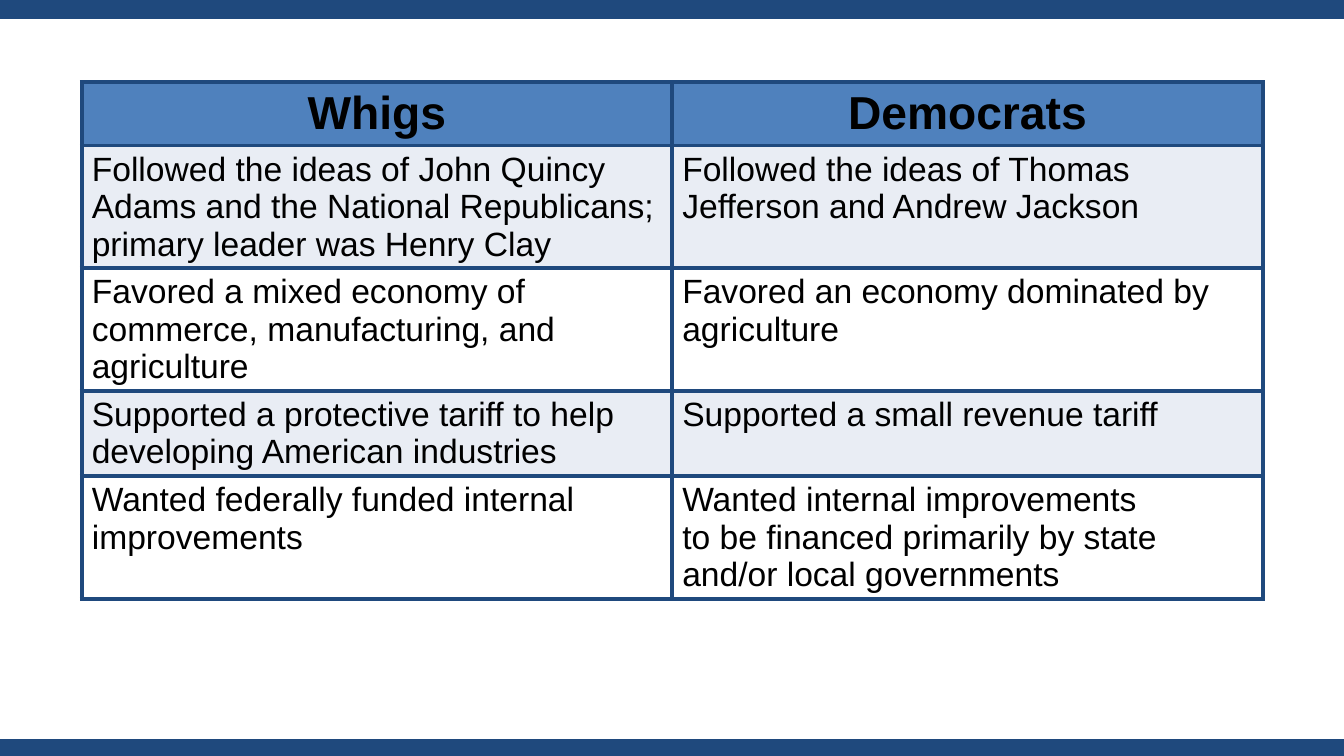
from dataclasses import dataclass

from lxml.etree import SubElement
from pptx import Presentation
from pptx.dml.color import RGBColor
from pptx.enum.shapes import MSO_SHAPE
from pptx.enum.text import MSO_ANCHOR, PP_ALIGN
from pptx.oxml.ns import qn
from pptx.util import Cm, Pt

COLORS = {
    "navy": "1F497D",
    "blue": "4F81BD",
    "pale": "E9EDF4",
    "white": "FFFFFF",
    "black": "000000",
}
FONT = "Arial"
BORDER = Pt(3)
WIDTH, HEIGHT = Cm(33.87), Cm(19.05)


@dataclass
class Row:
    height: float
    fill: str
    whigs: str
    dems: str
    head: bool = False


ROWS = [
    Row(1.6, "blue", "Whigs", "Democrats", head=True),
    Row(3.09, "pale",
        "Followed the ideas of John Quincy Adams and the National Republicans; "
        "primary leader was Henry Clay",
        "Followed the ideas of Thomas Jefferson and Andrew Jackson"),
    Row(3.09, "white",
        "Favored a mixed economy of commerce, manufacturing, and agriculture",
        "Favored an economy dominated by agriculture"),
    Row(2.15, "pale",
        "Supported a protective tariff to help developing American industries",
        "Supported a small revenue tariff"),
    Row(3.09, "white",
        "Wanted federally funded internal improvements",
        "Wanted internal improvements\n"
        "to be financed primarily by state and/or local governments"),
]


def tint(name: str) -> RGBColor:
    return RGBColor.from_string(COLORS[name])


def paint(target, name: str) -> None:
    target.fill.solid()
    target.fill.fore_color.rgb = tint(name)


def frame(cell) -> None:
    # Border lines come before the fill in the cell properties
    props = cell._tc.get_or_add_tcPr()
    for tag in ("a:lnL", "a:lnR", "a:lnT", "a:lnB"):
        line = SubElement(props, qn(tag), w=str(BORDER))
        fill = SubElement(line, qn("a:solidFill"))
        SubElement(fill, qn("a:srgbClr"), val=COLORS["navy"])


def write(cell, text: str, head: bool) -> None:
    body = cell.text_frame
    cell.vertical_anchor = MSO_ANCHOR.MIDDLE if head else MSO_ANCHOR.TOP
    for index, part in enumerate(text.split("\n")):
        para = body.add_paragraph() if index else body.paragraphs[0]
        para.alignment = PP_ALIGN.CENTER if head else PP_ALIGN.LEFT
        run = para.add_run()
        run.text = part
        run.font.name = FONT
        run.font.size = Pt(33 if head else 24)
        run.font.bold = head
        run.font.color.rgb = tint("black")


def draw_grid(slide, rows: list[Row]) -> None:
    total = Cm(sum(row.height for row in rows))
    table = slide.shapes.add_table(
        len(rows), 2, Cm(2.06), Cm(2.07), Cm(29.76), total).table
    table.horz_banding = False
    for line, row in zip(table.rows, rows):
        line.height = Cm(row.height)
        for cell, text in zip(line.cells, (row.whigs, row.dems)):
            frame(cell)
            paint(cell, row.fill)
            write(cell, text, row.head)


def main() -> None:
    deck = Presentation()
    deck.slide_width, deck.slide_height = WIDTH, HEIGHT
    slide = deck.slides.add_slide(deck.slide_layouts[6])

    # Navy bands show above and below the white panel
    paint(slide.background, "navy")
    panel = slide.shapes.add_shape(
        MSO_SHAPE.RECTANGLE, 0, Cm(0.48), WIDTH, Cm(18.14))
    panel.shadow.inherit = False
    paint(panel, "white")
    panel.line.fill.background()

    # Party table
    draw_grid(slide, ROWS)
    deck.save("out.pptx")


if __name__ == "__main__":
    main()
